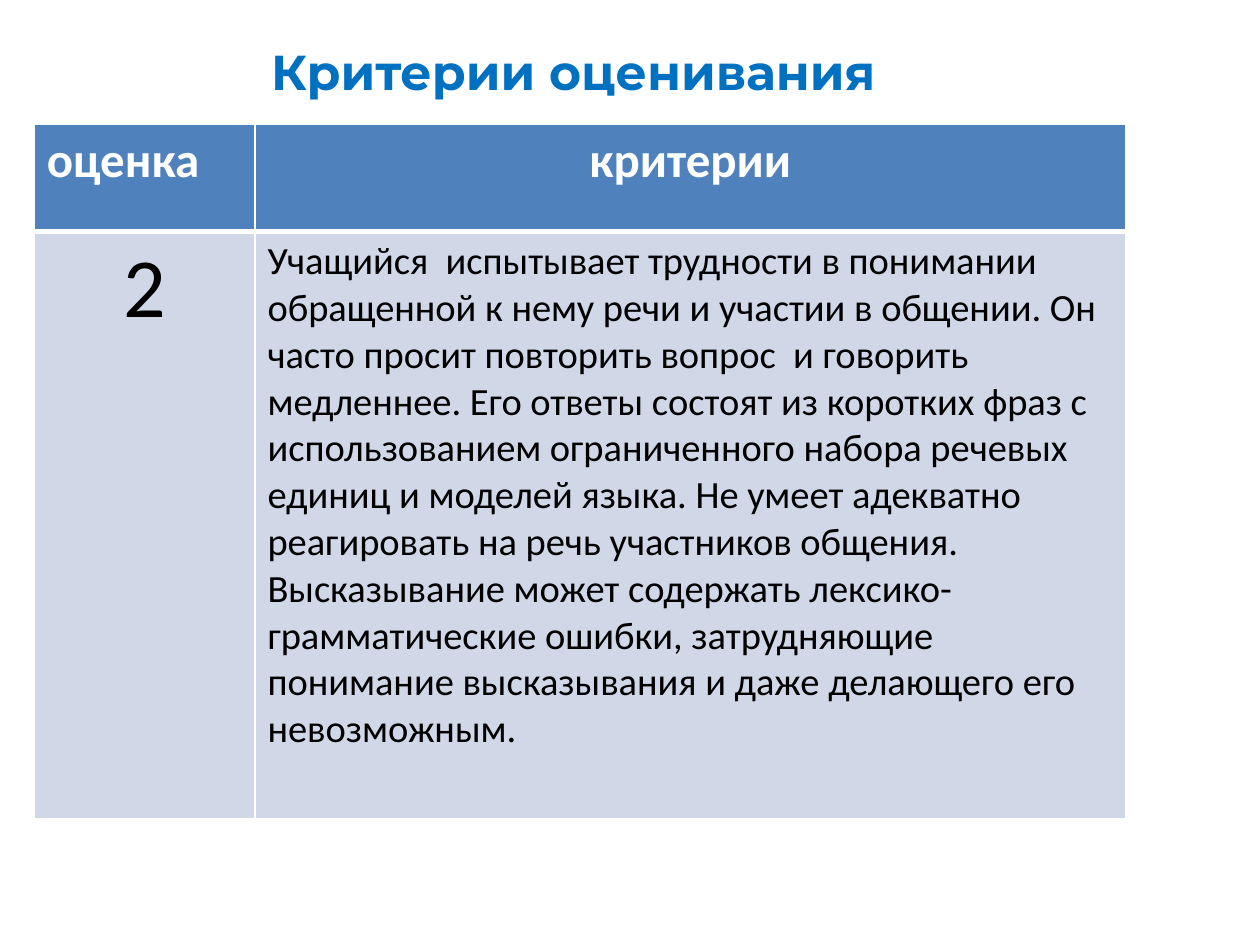
"""Build a slide with a table of grading criteria."""
from lxml import etree
from pptx import Presentation
from pptx.dml.color import RGBColor
from pptx.enum.text import MSO_AUTO_SIZE, PP_ALIGN
from pptx.oxml.ns import qn
from pptx.util import Cm, Pt

LEFT, MID = PP_ALIGN.LEFT, PP_ALIGN.CENTER
GROW = MSO_AUTO_SIZE.SHAPE_TO_FIT_TEXT
WHITE, BLACK, BLUE, PALE = "FFFFFF", "000000", "4F81BD", "D0D8E8"


def style(para, font, size, color, bold, align):
    para.alignment = align
    for run in para.runs:
        run.font.name = font
        run.font.size = Pt(size)
        run.font.bold = bold
        run.font.color.rgb = RGBColor.from_string(color)


def border(cell, side, width):
    props = cell._tc.get_or_add_tcPr()
    line = etree.SubElement(props, qn(f"a:ln{side}"), w=str(Pt(width)))
    fill = etree.SubElement(line, qn("a:solidFill"))
    etree.SubElement(fill, qn("a:srgbClr"), val=WHITE)


deck = Presentation()
deck.slide_width, deck.slide_height = Cm(25.4), Cm(19.05)
slide = deck.slides.add_slide(deck.slide_layouts[6])

title = slide.shapes.add_textbox(Cm(0), Cm(0.71), Cm(23.11), Cm(1.45))
frame = title.text_frame
frame.word_wrap = True
frame.auto_size = GROW
frame.text = "Критерии оценивания"
style(frame.paragraphs[0], "Montserrat", 28, "0070C0", True, MID)

body = (
    "Учащийся  испытывает трудности в понимании обращенной к нему речи "
    "и участии в общении. Он часто просит повторить вопрос  и говорить "
    "медленнее. Его ответы состоят из коротких фраз с использованием "
    "ограниченного набора речевых единиц и моделей языка. Не умеет "
    "адекватно реагировать на речь участников общения. Высказывание "
    "может содержать лексико-грамматические ошибки, затрудняющие "
    "понимание высказывания и даже делающего его невозможным."
)
rows = [
    (2.16, BLUE, WHITE, True, [("оценка", 28, LEFT), ("критерии", 28, MID)]),
    (11.84, PALE, BLACK, False, [("2", 48, MID), (body, 22, LEFT)]),
]

grid = slide.shapes.add_table(2, 2, Cm(0.69), Cm(2.51), Cm(22), Cm(14)).table
for col, width in zip(grid.columns, (4.45, 17.55)):
    col.width = Cm(width)
for r, (height, fill, color, bold, items) in enumerate(rows):
    grid.rows[r].height = Cm(height)
    for c, (text, size, align) in enumerate(items):
        cell = grid.cell(r, c)
        cell.text_frame.text = text
        style(cell.text_frame.paragraphs[0], "Calibri", size, color, bold, align)
        for side in "LRTB":
            shared = (r, side) in ((0, "B"), (1, "T"))
            border(cell, side, 3 if shared else 1)
        cell.fill.solid()
        cell.fill.fore_color.rgb = RGBColor.from_string(fill)

deck.save("out.pptx")
